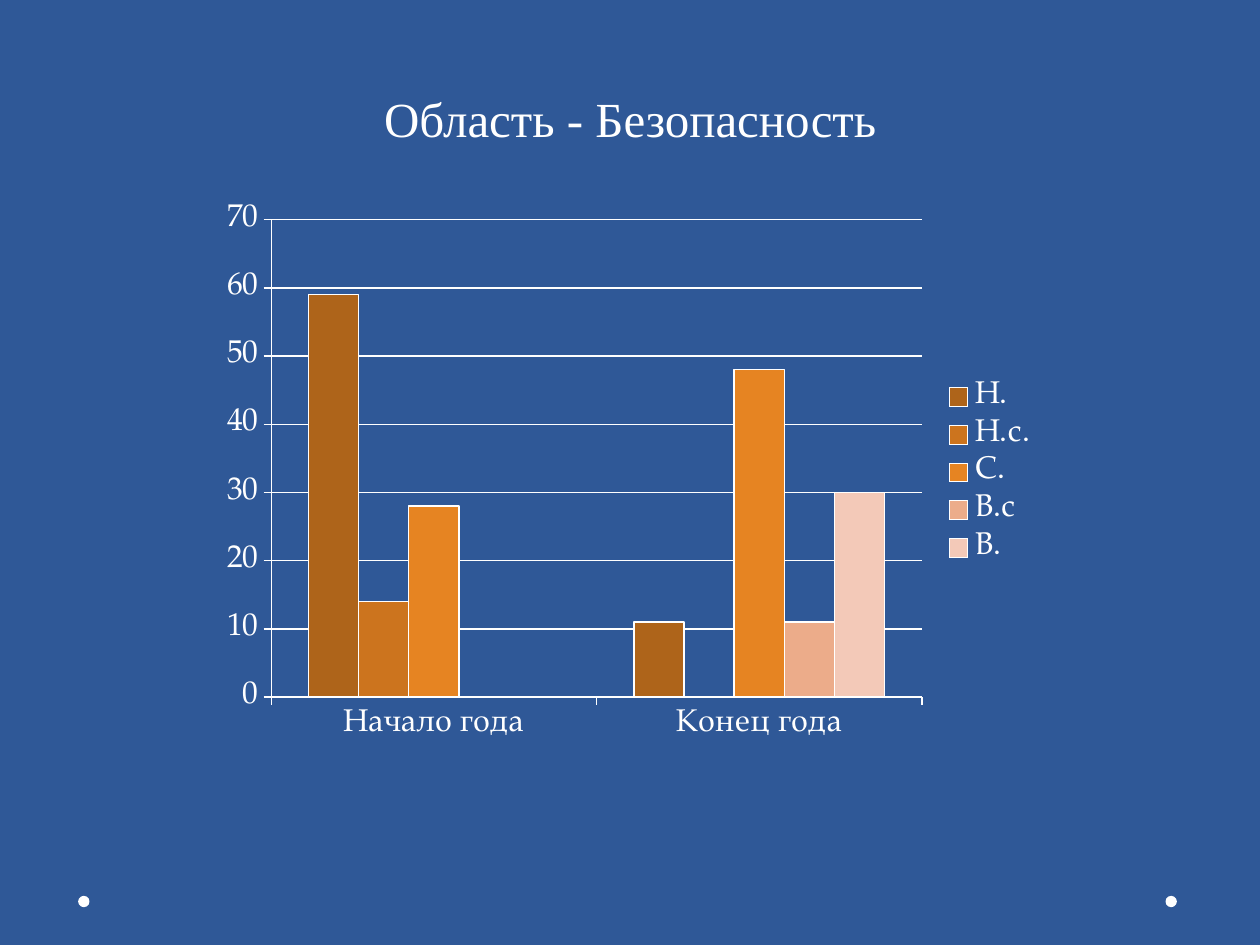
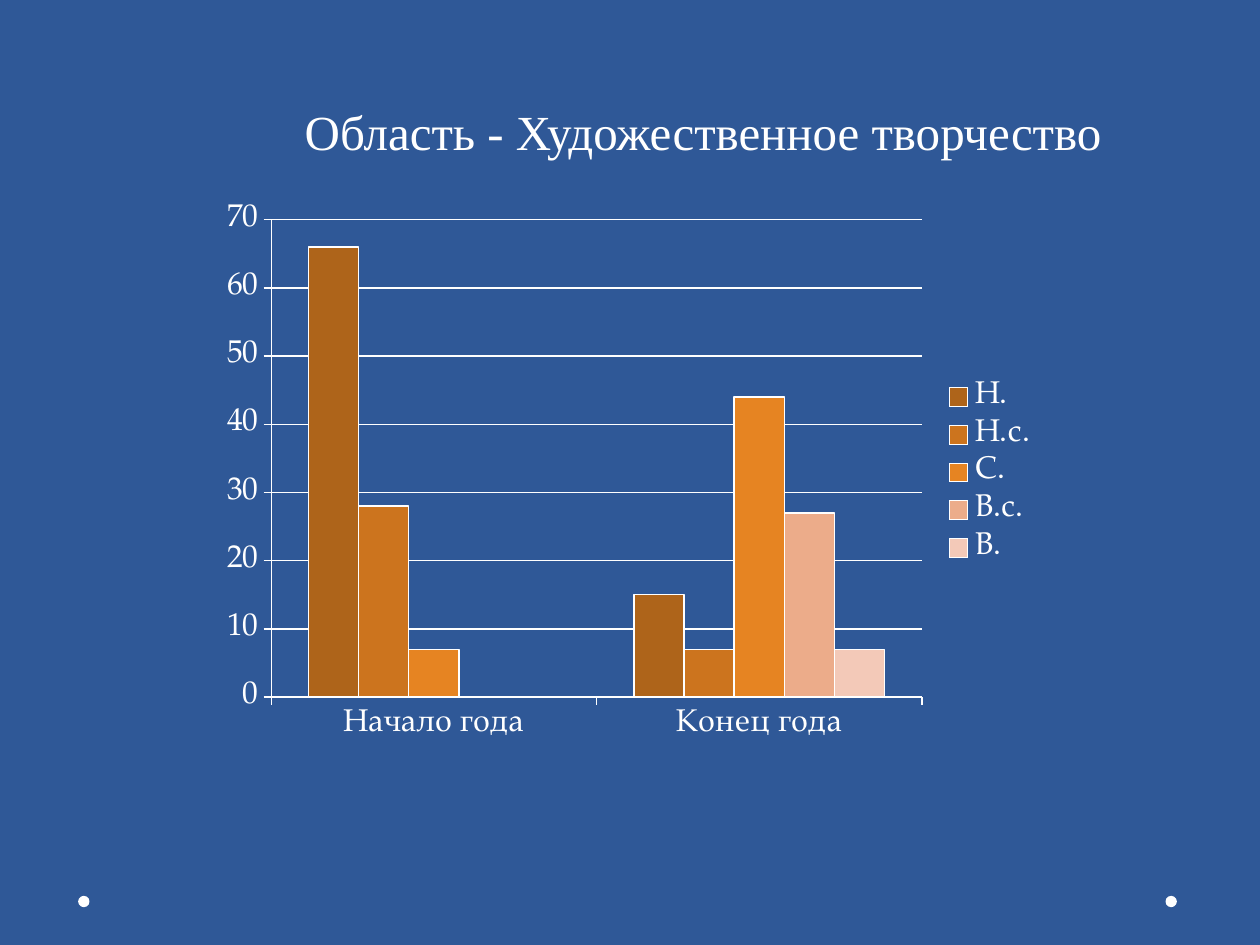
from pptx import Presentation
from pptx.chart.data import CategoryChartData
from pptx.dml.color import RGBColor
from pptx.enum import chart as charts, shapes, text
from pptx.util import Inches, Pt

BACKGROUND = "2F5897"
WHITE = "FFFFFF"
SERIES_COLORS = ["AE641A", "CC741E", "E68422", "ECAC8A", "F3C9B8"]
TITLE_FONT = "Times New Roman"
CHART_FONT = "TeX Gyre Pagella"
PERIODS = ["Начало года", "Конец года"]
CHART_BOX = (1.67, 1.53, 6.67, 4.44)
DOT_LEFTS = (0.62, 9.25)
DOT_TOP = 7.11
DOT_SIZE = 0.09

RESULTS = [
    {
        "title": "Область - Безопасность",
        "title_box": (2.95, 0.65, 4.15, 0.57),
        "levels": {"Н.": (59, 11), "Н.с.": (14, 0), "С.": (28, 48),
                   "В.с": (0, 11), "В.": (0, 30)},
    },
    {
        "title": "Область - Художественное творчество",
        "title_box": (2.32, 0.76, 6.6, 0.57),
        "levels": {"Н.": (66, 15), "Н.с.": (28, 7), "С.": (7, 44),
                   "В.с.": (0, 27), "В.": (0, 7)},
    },
]


def color(value):
    """Turn a hex string into a colour."""
    return RGBColor.from_string(value)


def inches(box):
    """Convert the numbers of a box to lengths."""
    return [Inches(number) for number in box]


def style_font(font, name, size, fill=WHITE):
    """Set the typeface, size and colour of a font."""
    font.name = name
    font.size = Pt(size)
    font.color.rgb = color(fill)


def style_line(line, fill=WHITE, width=0.75):
    """Set the colour and width of a line."""
    line.color.rgb = color(fill)
    line.width = Pt(width)


def add_text(slide, box, content, name=TITLE_FONT, size=28, fill=WHITE):
    """Add a one-line text box that grows with its text."""
    frame = slide.shapes.add_textbox(*inches(box)).text_frame
    frame.word_wrap = False
    frame.auto_size = text.MSO_AUTO_SIZE.SHAPE_TO_FIT_TEXT
    run = frame.paragraphs[0].add_run()
    run.text = content
    style_font(run.font, name, size, fill)


def add_backdrop(slide):
    """Fill the background and add the two bottom dots."""
    slide.background.fill.solid()
    slide.background.fill.fore_color.rgb = color(BACKGROUND)
    for left in DOT_LEFTS:
        dot = slide.shapes.add_shape(
            shapes.MSO_SHAPE.OVAL, *inches((left, DOT_TOP, DOT_SIZE, DOT_SIZE)))
        dot.shadow.inherit = False
        dot.fill.solid()
        dot.fill.fore_color.rgb = color(WHITE)
        dot.line.fill.background()


def style_axes(chart):
    """Format both axes, the scale and the gridlines."""
    for axis in (chart.category_axis, chart.value_axis):
        style_line(axis.format.line)
        axis.major_tick_mark = charts.XL_TICK_MARK.OUTSIDE
        axis.minor_tick_mark = charts.XL_TICK_MARK.NONE
    scale = chart.value_axis
    scale.minimum_scale, scale.maximum_scale, scale.major_unit = 0, 70, 10
    scale.has_major_gridlines = True
    style_line(scale.major_gridlines.format.line)


def add_level_chart(slide, box, levels):
    """Add the clustered columns comparing levels at both periods."""
    data = CategoryChartData()
    data.categories = PERIODS
    for name, values in levels.items():
        data.add_series(name, values)
    chart = slide.shapes.add_chart(
        charts.XL_CHART_TYPE.COLUMN_CLUSTERED, *inches(box), data).chart
    style_font(chart.font, CHART_FONT, 18)
    chart.has_title = False
    chart.has_legend = True
    chart.legend.position = charts.XL_LEGEND_POSITION.RIGHT
    chart.legend.include_in_layout = False
    style_axes(chart)
    plot = chart.plots[0]
    plot.gap_width = 150
    plot.overlap = 0
    plot.vary_by_categories = False
    for series, fill in zip(plot.series, SERIES_COLORS):
        series.format.fill.solid()
        series.format.fill.fore_color.rgb = color(fill)
        style_line(series.format.line)


def add_result_slide(presentation, result):
    """Add one slide with the results of an area."""
    slide = presentation.slides.add_slide(presentation.slide_layouts[6])
    add_backdrop(slide)
    add_level_chart(slide, CHART_BOX, result["levels"])
    add_text(slide, result["title_box"], result["title"])


def main():
    """Build and save the presentation."""
    presentation = Presentation()
    presentation.slide_width = Inches(10)
    presentation.slide_height = Inches(7.5)
    for result in RESULTS:
        add_result_slide(presentation, result)
    presentation.save("out.pptx")


if __name__ == "__main__":
    main()
